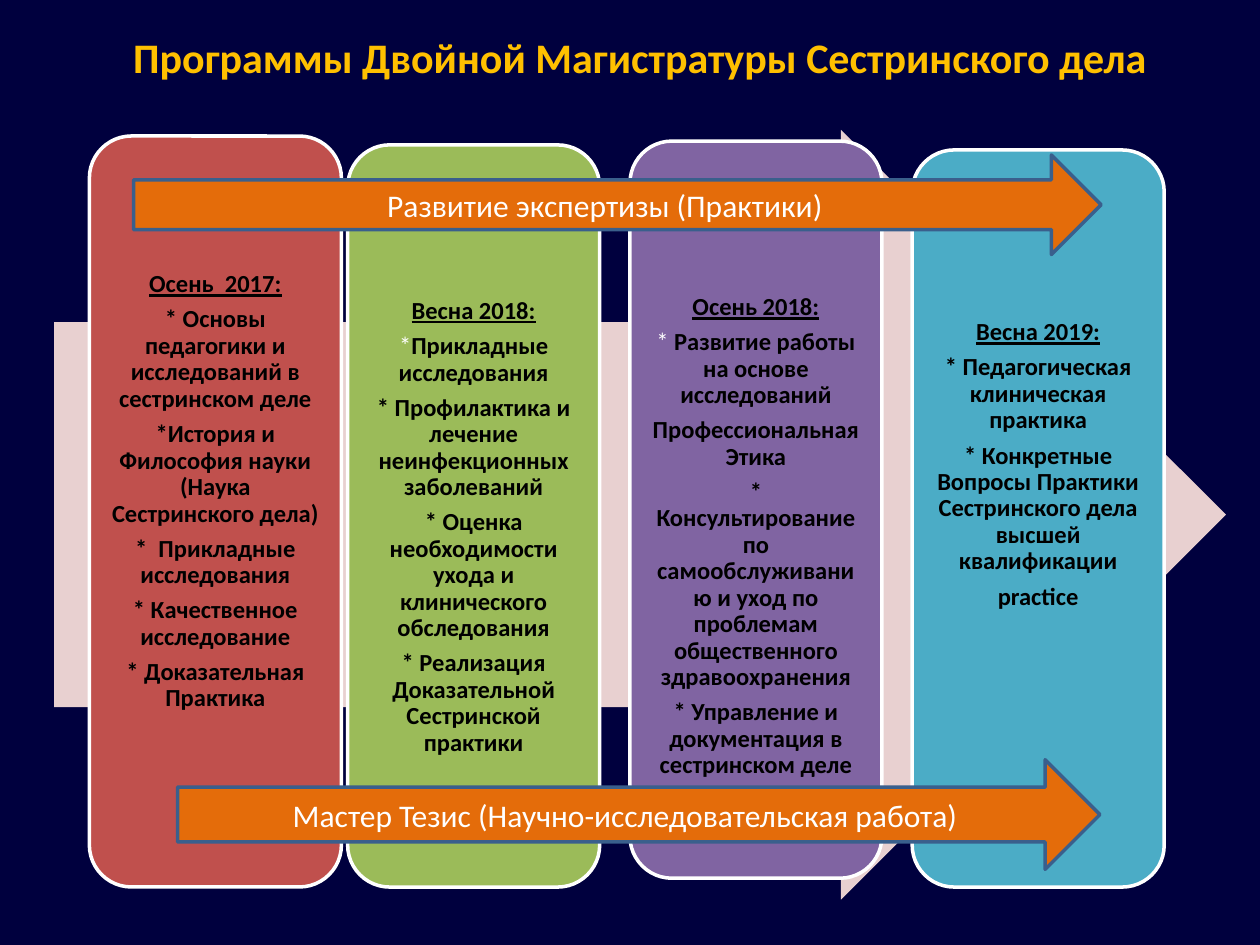
from dataclasses import dataclass

from pptx import Presentation
from pptx.dml.color import RGBColor as Rgb
from pptx.enum.shapes import MSO_SHAPE as Kind
from pptx.enum.text import MSO_ANCHOR as Anchor, MSO_AUTO_SIZE as Fit, PP_ALIGN as Align
from pptx.util import Inches, Pt


@dataclass(frozen=True)
class Theme:
    font: str = "Calibri"
    back: str = "00003E"
    title: str = "FFC000"
    dark: str = "000000"
    light: str = "FFFFFF"
    pale: str = "E8D0D0"
    band: str = "E46C0A"
    edge: str = "3A5F8C"
    head_size: int = 24
    band_size: int = 18
    card_size: int = 14


STAR = "* "
CARD_W = 2
CARD_PAD = 0.06
CORNER = 0.1  # text inset that the rounded corner adds by itself

# left, top, height, text top, fill, heading, lines;
# a line given as a pair has a plain light mark before its bold text
TERMS = [
    (0.71, 1.08, 5.96, 2.16, "C0504D", "Осень  2017:", [
        "* Основы педагогики и исследований в сестринском деле",
        "*История и Философия науки (Наука Сестринского дела)",
        "*  Прикладные исследования",
        "* Качественное исследование",
        "* Доказательная Практика"]),
    (2.76, 1.15, 5.89, 2.37, "9BBB59", "Весна 2018:", [
        ("*", "Прикладные исследования"),
        "* Профилактика и лечение неинфекционных заболеваний",
        "* Оценка необходимости ухода и клинического обследования",
        "* Реализация Доказательной Сестринской практики"]),
    (5, 1.12, 5.85, 2.34, "8064A2", "Осень 2018:", [
        (STAR, "Развитие работы на основе исследований"),
        "Профессиональная Этика",
        "* Консультирование по самообслуживанию и уход по проблемам "
        "общественного здравоохранения",
        "* Управление и документация в сестринском деле"]),
    (7.24, 1.19, 5.85, 2.54, "4BACC6", "Весна 2019:", [
        "* Педагогическая клиническая практика",
        "* Конкретные Вопросы Практики Сестринского дела высшей квалификации",
        "practice"]),
]

BANDS = [
    (1.41, 6.03, 7.32, 0.87, "Мастер Тезис (Научно-исследовательская работа)"),
    (1.06, 1.23, 7.68, 0.79, "Развитие экспертизы (Практики)"),
]


def write(para, text, *, font, size, color, bold=False, under=False):
    run = para.add_run()
    run.text = text
    style = run.font
    style.name, style.size = font, Pt(size)
    style.bold, style.underline = bold, under
    style.color.rgb = Rgb.from_string(color)


class Deck:
    """Holds the theme and the current slide."""

    def __init__(self, theme):
        self.theme = theme
        self.prs = Presentation()
        self.prs.slide_width, self.prs.slide_height = Inches(10), Inches(7.5)
        self.slide = self.prs.slides.add_slide(self.prs.slide_layouts[5])
        fill = self.slide.background.fill
        fill.solid()
        fill.fore_color.rgb = Rgb.from_string(theme.back)

    def text(self, para, words, **style):
        para.alignment = Align.CENTER
        write(para, words, font=self.theme.font, **style)

    def title(self, words, left, top, width, height):
        box = self.slide.shapes.title
        box.left, box.top = Inches(left), Inches(top)
        box.width, box.height = Inches(width), Inches(height)
        frame = box.text_frame
        frame.vertical_anchor, frame.auto_size = Anchor.TOP, Fit.NONE
        frame.margin_left = frame.margin_right = Inches(0.07)
        frame.margin_top = frame.margin_bottom = Inches(0.04)
        self.text(frame.paragraphs[0], words, size=self.theme.head_size,
                  color=self.theme.title, bold=True)

    def shape(self, kind, left, top, width, height, fill, line=None):
        item = self.slide.shapes.add_shape(
            kind, Inches(left), Inches(top), Inches(width), Inches(height))
        item.shadow.inherit = False
        item.fill.solid()
        item.fill.fore_color.rgb = Rgb.from_string(fill)
        if line:
            item.line.color.rgb = Rgb.from_string(line)
            item.line.width = Pt(2)
        else:
            item.line.fill.background()
        return item

    def arrow(self, left, top, width, height, fill, line=None, words=None):
        item = self.shape(Kind.RIGHT_ARROW, left, top, width, height, fill, line)
        if words:
            frame = item.text_frame
            frame.word_wrap, frame.vertical_anchor = True, Anchor.MIDDLE
            self.text(frame.paragraphs[0], words, size=self.theme.band_size,
                      color=self.theme.light)

    def card(self, left, top, height, start, fill, head, lines):
        look = self.theme
        item = self.shape(Kind.ROUNDED_RECTANGLE, left, top, CARD_W, height,
                          fill, look.light)
        frame = item.text_frame
        frame.word_wrap, frame.vertical_anchor = True, Anchor.TOP
        frame.margin_left = frame.margin_right = Inches(CARD_PAD)
        frame.margin_bottom = Inches(CARD_PAD)
        frame.margin_top = Inches(start - top - CORNER)
        for num, line in enumerate([head, *lines]):
            para = frame.add_paragraph() if num else frame.paragraphs[0]
            para.line_spacing, para.space_after = 0.9, Pt(4.9)
            mark, words = line if isinstance(line, tuple) else ("", line)
            if mark:
                self.text(para, mark, size=look.card_size, color=look.light)
            self.text(para, words, size=look.card_size, color=look.dark,
                      bold=True, under=num == 0)


def main():
    theme = Theme()
    deck = Deck(theme)
    deck.title("Программы Двойной Магистратуры Сестринского дела",
               0.67, 0.21, 8.82, 0.79)
    deck.arrow(0.43, 1.03, 9.3, 6.11, theme.pale)
    for term in TERMS:
        deck.card(*term)
    for *place, words in BANDS:
        deck.arrow(*place, theme.band, theme.edge, words)
    deck.prs.save("out.pptx")


if __name__ == "__main__":
    main()
